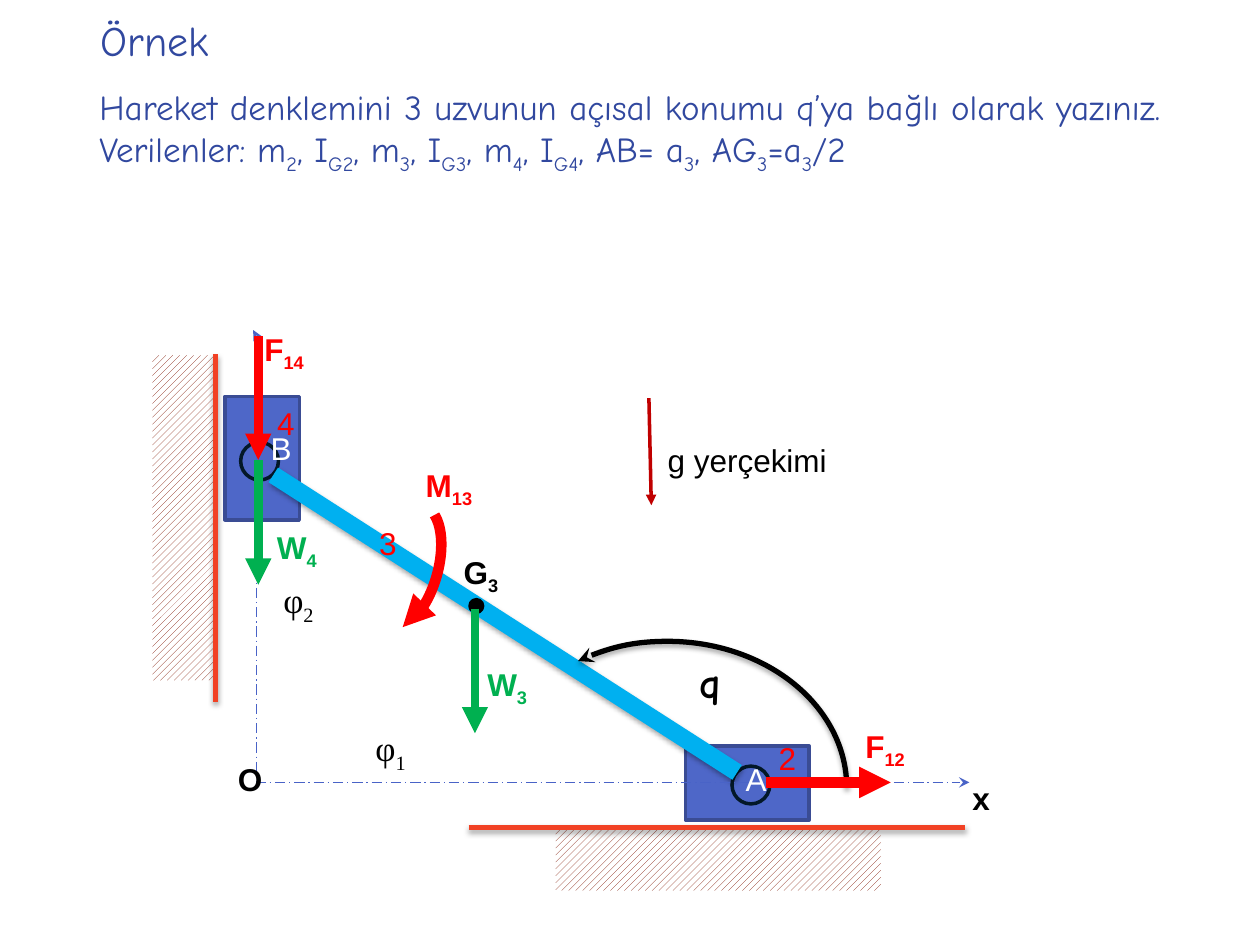
from lxml import etree
from pptx import Presentation
from pptx.dml.color import RGBColor
from pptx.enum.dml import MSO_LINE, MSO_PATTERN
from pptx.enum.shapes import MSO_CONNECTOR as CONN, MSO_SHAPE as SHAPE
from pptx.enum.text import MSO_ANCHOR, MSO_AUTO_SIZE, PP_ALIGN
from pptx.oxml.ns import qn
from pptx.util import Pt

C = {"title": "31489F", "black": "000000", "white": "FFFFFF", "red": "FF0000",
     "green": "00B050", "hatch": "821A08", "wall": "F14124", "block": "4E67C8",
     "edge": "3A4C94", "pin": "031828", "rod": "00B0F0", "axis": "4963C7",
     "gravity": "C00000"}
RGB = {name: RGBColor.from_string(value) for name, value in C.items()}


def add_runs(p, parts, size, font, color, bold=False):
    for i, text in enumerate(parts):
        r = p.add_run()
        r.text = text
        r.font.size, r.font.name, r.font.bold = Pt(size), font, bold
        r.font.color.rgb = RGB[color]
        if i % 2:
            r._r.get_or_add_rPr().set("baseline", "-25000")


def style_line(sp, color, width, head=None, tail=None, shadow=False):
    sp.line.color.rgb = RGB[color]
    sp.line.width = Pt(width)
    for tag, kind in (("a:headEnd", head), ("a:tailEnd", tail)):
        if kind:
            etree.SubElement(sp.line._ln, qn(tag), type=kind)
    spPr = sp._element.spPr
    effects = spPr.find(qn("a:effectLst"))
    if effects is None:
        effects = etree.SubElement(spPr, qn("a:effectLst"))
    if shadow:
        outer = etree.SubElement(effects, qn("a:outerShdw"), blurRad=str(Pt(3.1)),
                                 dist=str(Pt(1.8)), dir="5400000", rotWithShape="0")
        clr = etree.SubElement(outer, qn("a:srgbClr"), val=C["black"])
        etree.SubElement(clr, qn("a:alpha"), val="35000")


prs = Presentation()
prs.slide_width, prs.slide_height = Pt(720), Pt(540)
s = prs.slides.add_slide(prs.slide_layouts[5])

title = s.shapes.title
title.left, title.top, title.width, title.height = Pt(50.4), Pt(5.8), Pt(620.6), Pt(37.4)
title.text_frame.vertical_anchor = MSO_ANCHOR.MIDDLE
p = title.text_frame.paragraphs[0]
p.alignment, p.line_spacing = PP_ALIGN.LEFT, 0.9
add_runs(p, ["Örnek"], 24, "Comic Neue", "title")

body = s.shapes.add_textbox(Pt(49.7), Pt(48.2), Pt(620.6), Pt(101.5))
body.text_frame.word_wrap = True
p = body.text_frame.paragraphs[0]
p.alignment, p.line_spacing, p.space_before = PP_ALIGN.JUSTIFY, 0.9, Pt(7.5)
add_runs(p, ["Hareket denklemini 3 uzvunun açısal konumu q’ya bağlı olarak yazınız. "
             "Verilenler: m", "2", ", I", "G2", ", m", "3", ", I", "G3", ", m", "4",
             ", I", "G4", ", AB= a", "3", ", AG", "3", "=a", "3", "/2"],
         20, "Comic Neue", "title")

for x, y, angle in ((317.5, 473, 0), (12.2, 277.9, 270)):
    sp = s.shapes.add_shape(SHAPE.RECTANGLE, Pt(x), Pt(y), Pt(185.8), Pt(36))
    sp.rotation = angle
    sp.fill.patterned()
    sp.fill.pattern = MSO_PATTERN.WIDE_UPWARD_DIAGONAL
    sp.fill.fore_color.rgb, sp.fill.back_color.rgb = RGB["hatch"], RGB["white"]
    sp.line.fill.background()
    sp.shadow.inherit = False

for ends in ((267.8, 473, 551.5, 473), (123.1, 401, 123.1, 202.3)):
    wall = s.shapes.add_connector(CONN.STRAIGHT, *map(Pt, ends))
    style_line(wall, "wall", 3, shadow=True)

sliders = [
    (SHAPE.RECTANGLE, 391.7, 426.2, 70.6, 42.5, 0, "block", "edge"),
    (SHAPE.OVAL, 418.3, 437.8, 21.6, 21.6, 0, None, "pin"),
    (SHAPE.RECTANGLE, 114.5, 240.5, 70.6, 42.5, 90, "block", "edge"),
    (SHAPE.OVAL, 137.5, 252.7, 21.6, 21.6, 90, None, "pin"),
]
for kind, x, y, w, h, angle, fill, edge in sliders:
    sp = s.shapes.add_shape(kind, Pt(x), Pt(y), Pt(w), Pt(h))
    sp.rotation = angle
    if fill:
        sp.fill.solid()
        sp.fill.fore_color.rgb = RGB[fill]
    else:
        sp.fill.background()
    style_line(sp, edge, 2)

rod = s.shapes.add_connector(CONN.STRAIGHT, Pt(156.2), Pt(271.4), Pt(421.2), Pt(441.4))
style_line(rod, "rod", 10, shadow=True)

axes = s.shapes.add_connector(CONN.ELBOW, Pt(144.7), Pt(188.6), Pt(553.9), Pt(447.1))
etree.SubElement(axes._element.spPr.find(".//" + qn("a:avLst")), qn("a:gd"),
                 name="adj1", fmla="val 500")
axes.line.dash_style = MSO_LINE.LONG_DASH_DOT
style_line(axes, "axis", 0.75, "stealth", "stealth")

center = s.shapes.add_shape(SHAPE.OVAL, Pt(268.6), Pt(342.7), Pt(7.2), Pt(7.2))
center.fill.solid()
center.fill.fore_color.rgb = RGB["black"]
style_line(center, "black", 2)

arcs = [
    (279.4, 366.5, 204.5, 167, 0, (140.76, 0), "black", 3, "stealth", None, True),
    (195.1, 306, 73.4, 36.7, 106.1, (115.61, 208.03), "red", 6, None, "triangle", False),
]
for x, y, w, h, angle, adjust, color, width, head, tail, shadow in arcs:
    sp = s.shapes.add_shape(SHAPE.ARC, Pt(x), Pt(y), Pt(w), Pt(h))
    sp.rotation = angle
    for i, value in enumerate(adjust):
        sp.adjustments[i] = value
    sp.fill.background()
    style_line(sp, color, width, head, tail, shadow)

arrows = [
    (437.8, 447.1, 509, 447.1, "red", 6),
    (370.8, 227.5, 372.2, 288.7, "gravity", 2),
    (147.6, 192.2, 147.6, 262.8, "red", 5),
    (271.4, 347.8, 271.4, 419, "green", 5),
    (147.6, 262.8, 147.6, 334.1, "green", 5),
]
for *ends, color, width in arrows:
    force = s.shapes.add_connector(CONN.STRAIGHT, *map(Pt, ends))
    style_line(force, color, width, tail="triangle")

labels = [
    ("2", 437.8, 419, 32.4, 18, "Arial", "red", False),
    ("3", 209.5, 295.9, 32.4, 18, "Arial", "red", False),
    ("4", 151.2, 227.5, 32.4, 18, "Arial", "red", False),
    ("O", 128.9, 430.6, 32.4, 18, "Arial", "black", True),
    ("A", 419, 430.6, 32.4, 18, "Arial", "white", False),
    ("B", 147.6, 241.9, 32.4, 18, "Arial", "white", False),
    ("x", 548.6, 441.4, 32.4, 18, "Arial", "black", True),
    ("q", 392.4, 371.5, 32.4, 24, "Comic Neue", "black", True),
    ("g yerçekimi", 374.4, 248.4, 221, 18, "Arial", "black", False),
    ("G_3", 257.8, 312.5, 47.5, 18, "Arial", "black", True),
    ("F_14", 144, 185, 47.5, 18, "Arial", "red", True),
    ("F_12", 487.4, 411.8, 47.5, 18, "Arial", "red", True),
    ("M_13", 236.2, 262.8, 47.5, 18, "Arial", "red", True),
    ("W_3", 271.4, 376.6, 38.2, 18, "Arial", "green", True),
    ("W_4", 151.2, 298.1, 38.2, 18, "Arial", "green", True),
    ("φ_2", 154.8, 326.9, 31.7, 20, "Times New Roman", "black", False),
    ("φ_1", 207.4, 411.8, 31.7, 20, "Times New Roman", "black", False),
]
for text, x, y, w, size, font, color, bold in labels:
    box = s.shapes.add_textbox(Pt(x), Pt(y), Pt(w), Pt(size * 1.2 + 7.2))
    tf = box.text_frame
    tf.word_wrap = text[0] not in "Wφ"
    tf.auto_size = MSO_AUTO_SIZE.SHAPE_TO_FIT_TEXT
    add_runs(tf.paragraphs[0], text.split("_"), size, font, color, bold)

prs.save("out.pptx")
